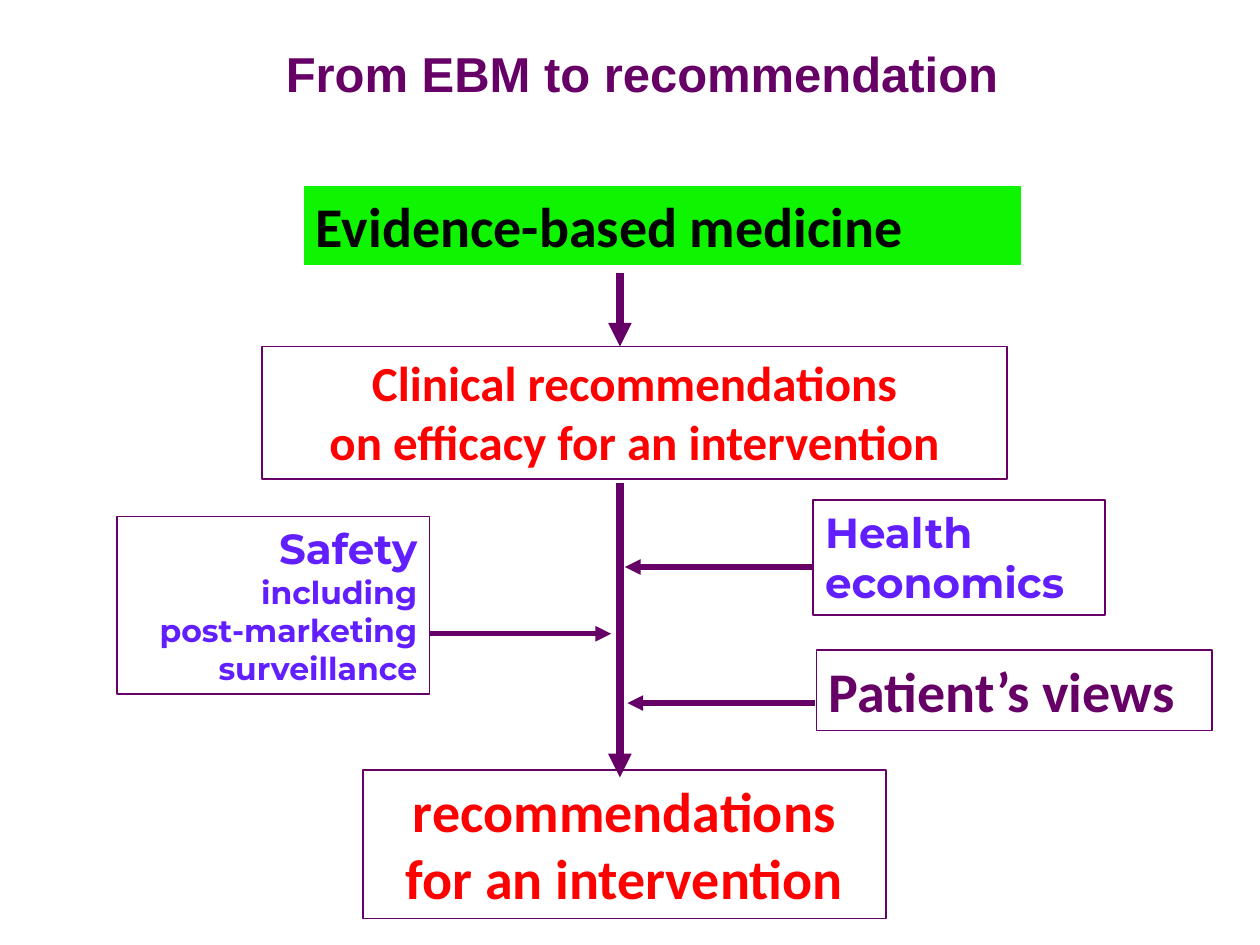
from lxml import etree
from pptx import Presentation
from pptx import util as u
from pptx.dml.color import RGBColor
from pptx.enum import shapes, text
from pptx.oxml.ns import qn

PURPLE, RED, VIOLET, WHITE = "660066", "FF0000", "611FFF", "FFFFFF"
LEFT, CENTER, RIGHT = text.PP_ALIGN.LEFT, text.PP_ALIGN.CENTER, text.PP_ALIGN.RIGHT
AXIS = 4.92


def color(value):
    return RGBColor.from_string(value)


def write(sp, lines, sizes, name, ink, align):
    tf = sp.text_frame
    tf.word_wrap = True
    tf.vertical_anchor = text.MSO_ANCHOR.TOP
    for i, (line, size) in enumerate(zip(lines, sizes)):
        p = tf.paragraphs[0] if i == 0 else tf.add_paragraph()
        p.alignment = align
        r = p.add_run()
        r.text = line
        for key, value in {"name": name, "size": u.Pt(size), "bold": True}.items():
            setattr(r.font, key, value)
        r.font.color.rgb = color(ink)


def add_title(s, box):
    sp = s.shapes.add_textbox(*map(u.Inches, box))
    write(sp, ["From EBM to recommendation"], [28], "Arial", PURPLE, LEFT)


def add_step(s, box, lines, sizes, name, ink, align, fill=WHITE, line=PURPLE, width=1):
    sp = s.shapes.add_shape(shapes.MSO_SHAPE.RECTANGLE, *map(u.Inches, box))
    sp.shadow.inherit = False
    sp.fill.solid()
    sp.fill.fore_color.rgb = color(fill)
    sp.line.color.rgb = color(line)
    sp.line.width = u.Pt(width)
    write(sp, lines, sizes, name, ink, align)


def add_arrow(s, ends, width):
    cx = s.shapes.add_connector(shapes.MSO_CONNECTOR.STRAIGHT, *map(u.Inches, ends))
    cx.line.color.rgb = color(PURPLE)
    cx.line.width = u.Pt(width)
    etree.SubElement(cx.line._get_or_add_ln(), qn("a:tailEnd"), type="triangle")
    etree.SubElement(cx._element.spPr, qn("a:effectLst"))


def add_main_flow(s):
    add_step(s, (2.41, 1.47, 5.7, 0.64), ["Evidence-based medicine"], [32],
             "Calibri", "000000", LEFT, "0FF400", WHITE)
    add_step(s, (2.08, 2.75, 5.91, 1.05),
             ["Clinical recommendations", "on efficacy for an intervention"],
             [28, 28], "Calibri", RED, CENTER)
    add_step(s, (2.88, 6.11, 4.15, 1.18), ["recommendations", "for an intervention"],
             [32, 32], "Calibri", RED, CENTER)
    for top, bottom in ((2.17, 2.75), (3.83, 6.17)):
        add_arrow(s, (AXIS, top, AXIS, bottom), 4.5)


def add_side_inputs(s):
    add_step(s, (0.93, 4.1, 2.48, 1.41),
             ["Safety", "including", "post-marketing", "surveillance"],
             [24, 18, 18, 18], "Montserrat", VIOLET, RIGHT)
    add_step(s, (6.45, 3.97, 2.32, 0.91), ["Health", "economics"], [24, 24],
             "Montserrat", VIOLET, LEFT)
    add_step(s, (6.48, 5.16, 3.14, 0.64), ["Patient’s views"], [32],
             "Calibri", PURPLE, LEFT, width=0.75)
    for start, end, y in ((3.41, 4.85, 5.03), (6.45, 4.96, 4.5), (6.47, 4.98, 5.58)):
        add_arrow(s, (start, y, end, y), 3)


def main():
    prs = Presentation()
    prs.slide_width, prs.slide_height = u.Inches(10), u.Inches(7.5)
    s = prs.slides.add_slide(prs.slide_layouts[6])
    add_title(s, (2.17, 0.3, 6.51, 0.57))
    add_side_inputs(s)
    add_main_flow(s)
    prs.save("out.pptx")


if __name__ == "__main__":
    main()
